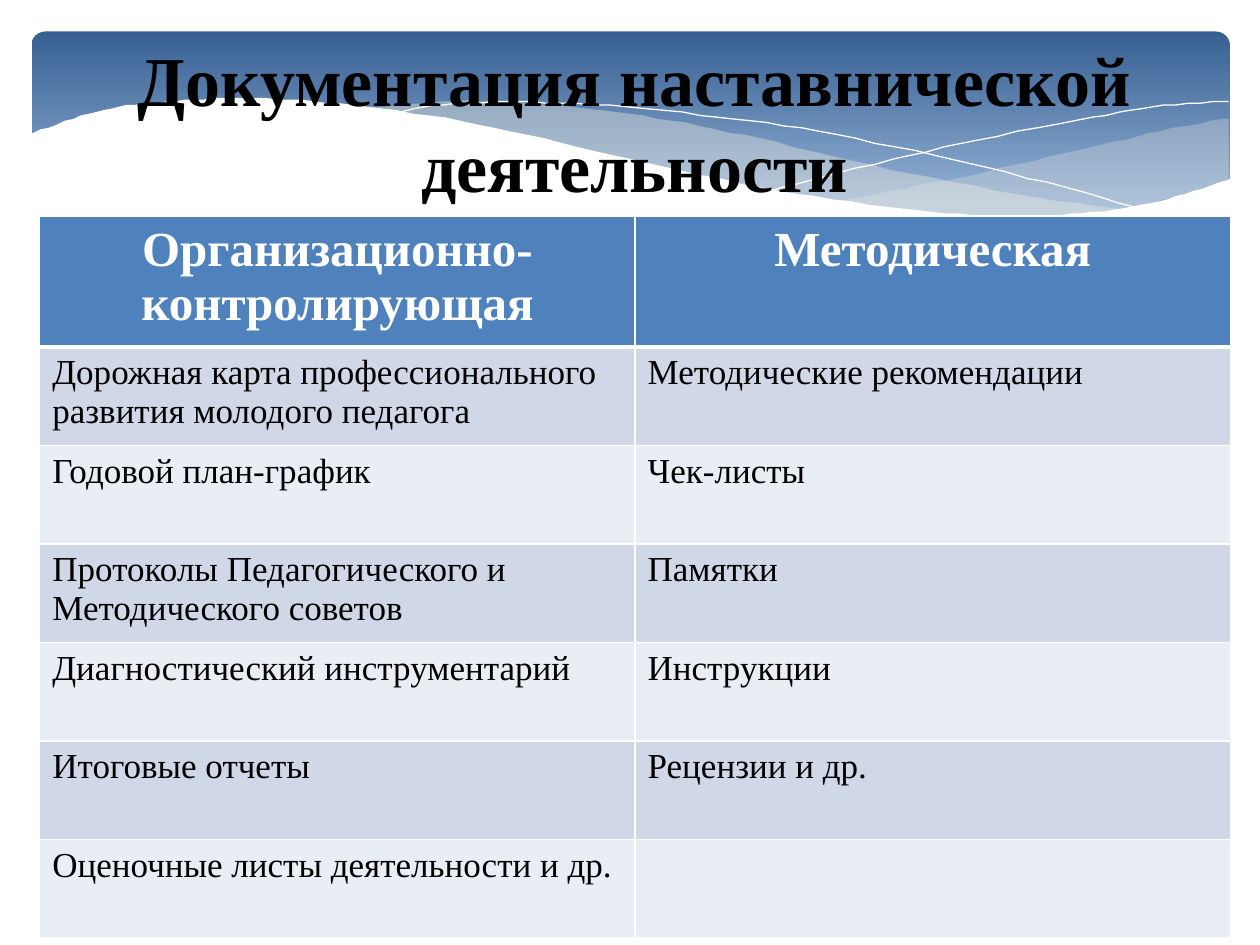
from lxml.etree import SubElement
from pptx import Presentation
from pptx.dml.color import RGBColor
from pptx.enum.shapes import MSO_SHAPE as Shape
from pptx.enum.text import MSO_ANCHOR as Anchor, PP_ALIGN as Align
from pptx.oxml.ns import qn
from pptx.util import Pt

COLORS = {
    "band_top": "376092", "band_bottom": "95B3D7", "veil": "EEECE1",
    "white": "FFFFFF", "black": "000000",
    "header": "4F81BD", "odd_row": "D0D8E8", "even_row": "E9EDF4",
}
FONT = "Times New Roman"
TITLE = {"size": Pt(40), "bold": True, "color": "black", "align": Align.CENTER}
HEADER = {"size": Pt(28), "bold": True, "color": "white", "align": Align.CENTER}
BODY = {"size": Pt(20), "bold": False, "color": "black", "align": Align.LEFT}


def smooth(points, steps=6):
    """Return a Catmull-Rom curve through the points."""
    padded = [points[0], *points, points[-1]]
    curve = [points[0]]
    for a, b, c, d in zip(padded, padded[1:], padded[2:], padded[3:]):
        for step in range(1, steps + 1):
            t = step / steps
            curve.append(tuple(
                (2 * q + (r - p) * t + (2 * p - 5 * q + 4 * r - s) * t**2
                 + (3 * q - p - 3 * r + s) * t**3) / 2
                for p, q, r, s in zip(a, b, c, d)))
    return curve


def write(frame, text, style):
    paragraph = frame.paragraphs[0]
    paragraph.alignment = style["align"]
    run = paragraph.add_run()
    run.text = text
    run.font.name = FONT
    run.font.color.rgb = RGBColor.from_string(COLORS[style["color"]])
    for name in ("size", "bold"):
        setattr(run.font, name, style[name])


presentation = Presentation()
presentation.slide_width, presentation.slide_height = Pt(720), Pt(540)
slide = presentation.slides.add_slide(presentation.slide_layouts[6])
shapes = slide.shapes

# Gradient band behind the title
band = shapes.add_shape(Shape.ROUNDED_RECTANGLE, Pt(18), Pt(18), Pt(684.7), Pt(112.3))
band.adjustments[0] = 0.071
band.shadow.inherit = False
band.line.fill.background()
band.fill.gradient()
band.fill.gradient_angle = 270
for stop, position, color in zip(band.fill.gradient_stops, (0, 0.9), ("band_top", "band_bottom")):
    stop.position = position
    stop.color.rgb = RGBColor.from_string(COLORS[color])

# Waves: each is a list of curves joined at corners; opacity None means a bare line
right_veil = [
    [(702.5, 67.7), (663, 74.9), (620, 85), (561, 98.6), (508, 109.4), (476, 115.2)],
    [(476, 115.2), (508, 118.8), (545, 122.4), (586, 123.8), (621, 122.4),
     (652, 117.4), (678, 110.9), (702.5, 101.5)],
]
wide_veil = [
    [(643, 120.2), (581, 110.9), (508, 96.5), (453, 83.5), (400, 72), (352, 64.1),
     (302, 59), (260, 57.6), (206, 61.9)],
    [(206, 61.9), (261, 69.8), (323, 83.5), (408, 103), (468, 113.8), (520, 121),
     (565, 123.8), (596, 124.6), (624, 122.4), (643, 120.2)],
]
falling_line = [
    [(222.5, 64.8), (248, 60.5), (289, 58.3), (338, 59.8), (400, 65.5), (458, 73.4),
     (523, 86.4), (598, 104.4), (653, 119.5)],
]
rising_line = [
    [(441, 108.7), (500, 93.6), (559, 79.9), (624, 67), (665, 60.5), (702, 57.6)],
]
white_wave = [
    [(703.4, 101.5), (677, 110.9), (647, 118), (612, 122.4), (571, 123.1), (523, 120.2),
     (466, 112.3), (400, 100), (322, 82), (263, 69), (210, 61.2), (166, 56.9),
     (127, 56.2), (95, 58.3), (68, 61.2), (42, 67.7), (16.6, 77)],
    [(16.6, 161), (703.4, 161)],
]
for curves, color, opacity in (
    (right_veil, "veil", 29), (wide_veil, "veil", 40), (falling_line, "white", None),
    (rising_line, "white", None), (white_wave, "white", 100),
):
    outline = [point for curve in curves
               for point in (smooth(curve) if len(curve) > 2 else curve)]
    builder = shapes.build_freeform(*outline[0], scale=Pt(1))
    builder.add_line_segments(outline[1:], close=opacity is not None)
    wave = builder.convert_to_shape()
    wave.shadow.inherit = False
    if opacity is None:
        wave.fill.background()
        wave.line.color.rgb = RGBColor.from_string(COLORS[color])
        wave.line.width = Pt(0)
        continue
    wave.line.fill.background()
    wave.fill.solid()
    wave.fill.fore_color.rgb = RGBColor.from_string(COLORS[color])
    if opacity < 100:
        rgb = next(wave.element.spPr.iter(qn("a:srgbClr")))
        SubElement(rgb, qn("a:alpha"), val=str(opacity * 1000))

title = shapes.add_textbox(Pt(22.3), Pt(16.6), Pt(680.4), Pt(104.4)).text_frame
title.word_wrap = True
title.vertical_anchor = Anchor.MIDDLE
write(title, "Документация наставнической деятельности", TITLE)
title.paragraphs[0].line_spacing = 1.03

# Documentation table
rows = [
    ("Организационно-контролирующая", "Методическая"),
    ("Дорожная карта профессионального развития молодого педагога",
     "Методические рекомендации"),
    ("Годовой план-график", "Чек-листы"),
    ("Протоколы Педагогического и Методического советов", "Памятки"),
    ("Диагностический инструментарий", "Инструкции"),
    ("Итоговые отчеты", "Рецензии и др."),
    ("Оценочные листы деятельности и др.", ""),
]
header_height, row_height = 74, 56.3
table = shapes.add_table(len(rows), 2, Pt(22.7), Pt(123.8), Pt(680.4),
                         Pt(header_height + row_height * (len(rows) - 1))).table
for row_index, texts in enumerate(rows):
    table.rows[row_index].height = Pt(row_height if row_index else header_height)
    if row_index == 0:
        fill, style = "header", HEADER
    else:
        fill, style = ("odd_row" if row_index % 2 else "even_row"), BODY
    widths = {"lnL": 1, "lnR": 1, "lnT": 3 if row_index == 1 else 1,
              "lnB": 3 if row_index == 0 else 1}
    for column_index, text in enumerate(texts):
        cell = table.cell(row_index, column_index)
        if text:
            write(cell.text_frame, text, style)
        properties = cell._tc.get_or_add_tcPr()
        for side, width in widths.items():
            border = SubElement(properties, qn(f"a:{side}"), w=str(Pt(width)))
            border_fill = SubElement(border, qn("a:solidFill"))
            SubElement(border_fill, qn("a:srgbClr"), val=COLORS["white"])
        cell.fill.solid()
        cell.fill.fore_color.rgb = RGBColor.from_string(COLORS[fill])

presentation.save("out.pptx")
